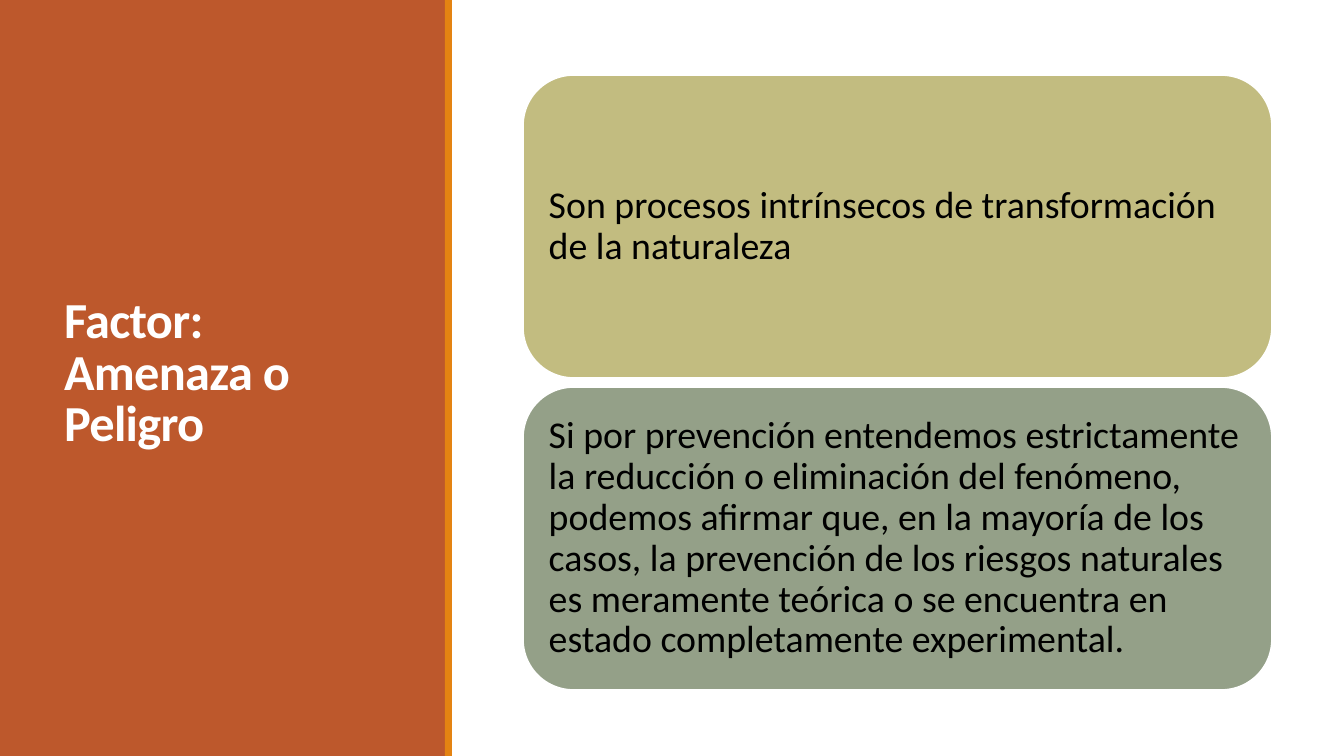
from dataclasses import dataclass

from pptx import Presentation
from pptx.dml.color import RGBColor
from pptx.enum.shapes import MSO_SHAPE as Shape
from pptx.enum.text import MSO_ANCHOR as Anchor, MSO_AUTO_SIZE as AutoSize, PP_ALIGN as Align
from pptx.util import Pt

# Content
TITLE = "Factor: Amenaza o Peligro"
STATEMENTS = [
    ("Son procesos intrínsecos de transformación de la naturaleza", "C2BC80"),
    ("Si por prevención entendemos estrictamente la reducción o eliminación del "
     "fenómeno, podemos afirmar que, en la mayoría de los casos, la prevención de "
     "los riesgos naturales es meramente teórica o se encuentra en estado "
     "completamente experimental.", "94A088"),
]


@dataclass(frozen=True)
class Theme:
    font: str = "Calibri"
    title_size: int = 36
    body_size: int = 27
    panel: str = "BD582C"
    accent: str = "E48312"
    light: str = "FFFFFF"
    dark: str = "000000"


THEME = Theme()

# Layout in px
SLIDE_W, SLIDE_H = 1344, 756
EMU_PER_PX = 12192000 / SLIDE_W
PANEL_W, STRIPE_W = 446, 7
TITLE_BOX = (54, 57, 340, 636)
CARD_X, CARD_Y, CARD_W, CARD_H, CARD_GAP = 523, 75, 749, 303, 9
CARD_INSET = 11


def px(length):
    return round(length * EMU_PER_PX)


def add_filled(slide, kind, box, color):
    shape = slide.shapes.add_shape(kind, *map(px, box))
    shape.shadow.inherit = False
    shape.fill.solid()
    shape.fill.fore_color.rgb = RGBColor.from_string(color)
    shape.line.fill.background()
    return shape


def write(shape, text, size, color, line_spacing, bold=False):
    frame = shape.text_frame
    frame.text = text
    frame.word_wrap = True
    frame.auto_size = AutoSize.NONE
    frame.vertical_anchor = Anchor.MIDDLE
    paragraph = frame.paragraphs[0]
    paragraph.alignment = Align.LEFT
    paragraph.line_spacing = line_spacing
    font = paragraph.font
    font.name, font.size, font.bold = THEME.font, Pt(size), bold
    font.color.rgb = RGBColor.from_string(color)
    return frame


def main():
    deck = Presentation()
    deck.slide_width, deck.slide_height = px(SLIDE_W), px(SLIDE_H)
    slide = deck.slides.add_slide(deck.slide_layouts[5])

    # Side panel and its stripe
    add_filled(slide, Shape.RECTANGLE, (0, 0, PANEL_W, SLIDE_H), THEME.panel)
    add_filled(slide, Shape.RECTANGLE, (PANEL_W - 1, 0, STRIPE_W, SLIDE_H), THEME.accent)

    # Title, raised above the panel
    title = slide.shapes.title
    title.left, title.top, title.width, title.height = map(px, TITLE_BOX)
    heading = write(title, TITLE, THEME.title_size, THEME.light, 0.85, bold=True)
    heading.paragraphs[0].runs[0].font._element.set("spc", "-50")
    slide.shapes._spTree.append(title._element)

    # Stacked statement cards
    for row, (statement, color) in enumerate(STATEMENTS):
        top = CARD_Y + row * (CARD_H + CARD_GAP)
        card = add_filled(slide, Shape.ROUNDED_RECTANGLE, (CARD_X, top, CARD_W, CARD_H), color)
        card.line.color.rgb = RGBColor.from_string(THEME.light)
        card.line.width = Pt(1.25)
        frame = write(card, statement, THEME.body_size, THEME.dark, 0.9)
        frame.margin_left = frame.margin_right = px(CARD_INSET)
        frame.margin_top = frame.margin_bottom = px(CARD_INSET)

    deck.save("out.pptx")


if __name__ == "__main__":
    main()
